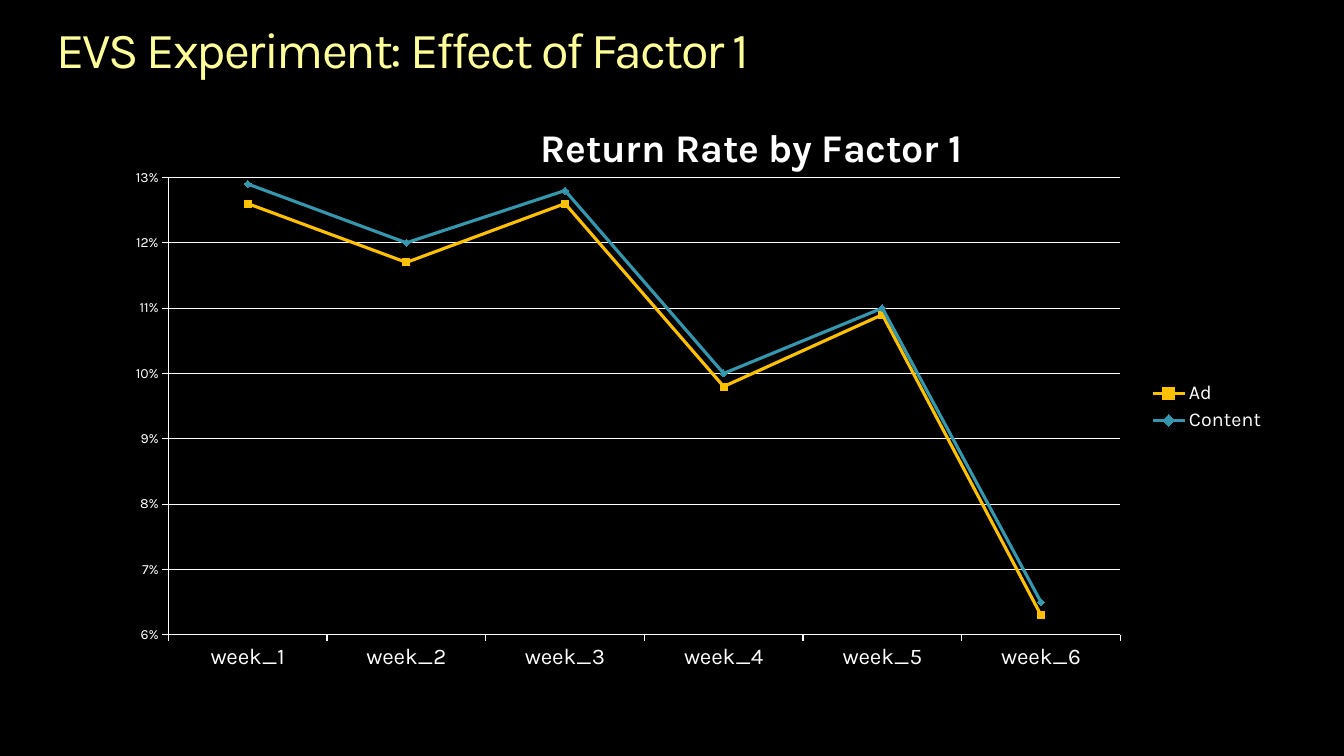
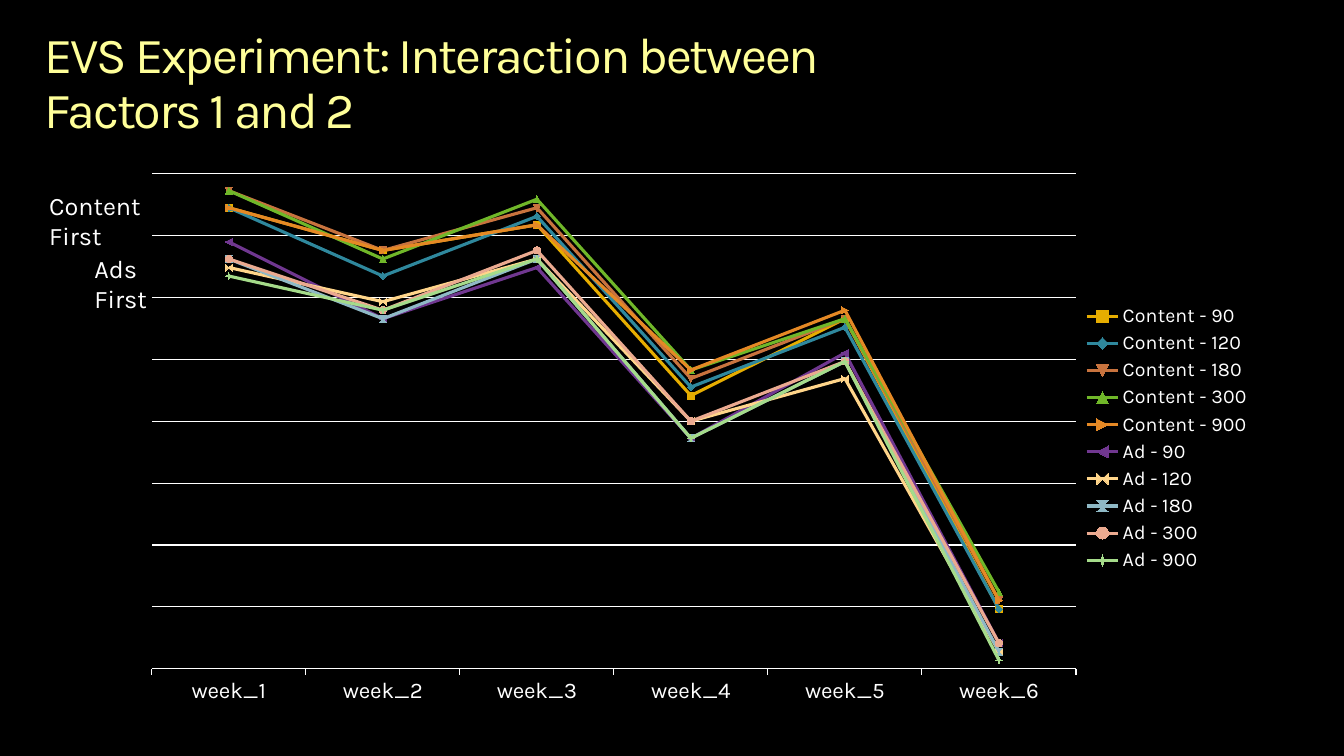
"""Build two slides showing the weekly return rates of the EVS experiment."""
import dataclasses
import typing

import lxml.etree
import pptx
import pptx.chart.chart
import pptx.chart.data
import pptx.dml.color
import pptx.enum.chart
import pptx.oxml.ns
import pptx.slide
import pptx.text.text
import pptx.util

FONT = "Karla"
BLACK, WHITE, YELLOW = "000000", "FFFFFF", "FFFF99"
WEEKS = [f"week_{number}" for number in range(1, 7)]


class Box(typing.NamedTuple):
    left: float
    top: float
    width: float
    height: float

    def lengths(self) -> list[pptx.util.Length]:
        return [pptx.util.Cm(value) for value in self]


class Series(typing.NamedTuple):
    name: str
    color: str
    values: list[float]


class Label(typing.NamedTuple):
    text: str
    box: Box


@dataclasses.dataclass(frozen=True)
class LineChart:
    box: Box
    plot: Box
    series: list[Series]
    minimum: float
    maximum: float
    step: float
    number_format: str
    title: str = ""
    title_place: tuple[float, float] = (0, 0)
    show_values: bool = True


@dataclasses.dataclass(frozen=True)
class ChartSlide:
    title_lines: list[str]
    title_box: Box
    chart: LineChart
    labels: list[Label] = dataclasses.field(default_factory=list)


SLIDES = [
    ChartSlide(
        ["EVS Experiment: Effect of Factor 1"],
        Box(1.42, 0.64, 31, 1.4),
        LineChart(
            box=Box(1.98, 2.9, 30.18, 14.7),
            plot=Box(0.075, 0.107, 0.795, 0.784),
            series=[
                Series("Ad", "FFC000", [0.126, 0.117, 0.126, 0.098, 0.109, 0.063]),
                Series("Content", "3497AE", [0.129, 0.12, 0.128, 0.1, 0.11, 0.065]),
            ],
            minimum=0.06,
            maximum=0.13,
            step=0.01,
            number_format="0%",
            title="Return Rate by Factor 1",
            title_place=(0.38, 0),
        ),
    ),
    ChartSlide(
        ["EVS Experiment: Interaction between", "Factors 1 and 2"],
        Box(1.12, 0.76, 31.6, 2.77),
        LineChart(
            box=Box(2.54, 4.01, 29.26, 14.07),
            plot=Box(0.044, 0.026, 0.796, 0.887),
            series=[
                Series("Content - 90", "E6AD00", [98, 93, 96, 76, 85, 51]),
                Series("Content - 120", "2F889D", [98, 90, 97, 77, 84, 51]),
                Series("Content - 180", "C8733E", [100, 93, 98, 78, 85, 52]),
                Series("Content - 300", "70B729", [100, 92, 99, 79, 85, 53]),
                Series("Content - 900", "E58925", [98, 93, 96, 79, 86, 52]),
                Series("Ad - 90", "703790", [94, 85, 91, 71, 81, 47]),
                Series("Ad - 120", "FFD58A", [91, 87, 92, 73, 78, 46]),
                Series("Ad - 180", "8FB9C6", [92, 85, 92, 71, 80, 46]),
                Series("Ad - 300", "EBAA90", [92, 86, 93, 73, 80, 47]),
                Series("Ad - 900", "A5DB8A", [90, 86, 92, 71, 80, 45]),
            ],
            minimum=44,
            maximum=102,
            step=7.25,
            number_format="0.00%",
            show_values=False,
        ),
        [
            Label("Ads First", Box(2.13, 6.25, 2.6, 1.02)),
            Label("Content First", Box(0.99, 4.67, 3.8, 1.02)),
        ],
    ),
]


def rgb(color: str) -> pptx.dml.color.RGBColor:
    return pptx.dml.color.RGBColor.from_string(color)


def style_font(font: pptx.text.text.Font, size: float, color: str = WHITE) -> None:
    font.name = FONT
    font.size = pptx.util.Pt(size)
    font.color.rgb = rgb(color)


def add_text_frame(slide: pptx.slide.Slide, box: Box) -> pptx.text.text.TextFrame:
    frame = slide.shapes.add_textbox(*box.lengths()).text_frame
    frame.word_wrap = True
    return frame


def add_title(slide: pptx.slide.Slide, lines: list[str], box: Box) -> None:
    frame = add_text_frame(slide, box)
    frame.margin_left = frame.margin_right = frame.margin_top = frame.margin_bottom = 0
    paragraph = frame.paragraphs[0]
    paragraph.line_spacing = 0.9
    for index, line in enumerate(lines):
        if index:
            paragraph.add_line_break()
        run = paragraph.add_run()
        run.text = line
        style_font(run.font, 36, YELLOW)
        run.font._element.set("spc", "-150")


def add_label(slide: pptx.slide.Slide, label: Label) -> None:
    run = add_text_frame(slide, label.box).paragraphs[0].add_run()
    run.text = label.text
    style_font(run.font, 18)


def set_layout(parent: typing.Any, position: int, settings: dict[str, typing.Any]) -> None:
    qualified = pptx.oxml.ns.qn
    for old_layout in parent.findall(qualified("c:layout")):
        parent.remove(old_layout)
    layout = lxml.etree.Element(qualified("c:layout"))
    manual = lxml.etree.SubElement(layout, qualified("c:manualLayout"))
    for name, value in settings.items():
        lxml.etree.SubElement(manual, qualified(f"c:{name}")).set("val", str(value))
    parent.insert(position, layout)


def style_axes(chart: pptx.chart.chart.Chart, content: LineChart) -> None:
    for axis, size in ((chart.category_axis, 16), (chart.value_axis, 10)):
        style_font(axis.tick_labels.font, size)
        axis.major_tick_mark = pptx.enum.chart.XL_TICK_MARK.OUTSIDE
        axis.format.line.color.rgb = rgb(WHITE)
        axis.format.line.width = pptx.util.Pt(0.75)
    values = chart.value_axis
    values.minimum_scale, values.maximum_scale = content.minimum, content.maximum
    values.major_unit = content.step
    values.tick_labels.number_format = content.number_format
    values.tick_labels.number_format_is_linked = False
    values.has_major_gridlines = True
    values.major_gridlines.format.line.color.rgb = rgb(WHITE)
    values.major_gridlines.format.line.width = pptx.util.Pt(0.75)
    values.visible = content.show_values


def add_chart_title(chart: pptx.chart.chart.Chart, content: LineChart) -> None:
    chart.has_title = bool(content.title)
    if content.title:
        run = chart.chart_title.text_frame.paragraphs[0].add_run()
        run.text = content.title
        style_font(run.font, 28)
        run.font.bold = True
        left, top = content.title_place
        place = {"xMode": "edge", "yMode": "edge", "x": left, "y": top}
        set_layout(chart.chart_title._element, 1, place)


def add_line_chart(slide: pptx.slide.Slide, content: LineChart) -> None:
    data = pptx.chart.data.CategoryChartData(number_format=content.number_format)
    data.categories = WEEKS
    for series in content.series:
        data.add_series(series.name, series.values)
    chart_type = pptx.enum.chart.XL_CHART_TYPE.LINE_MARKERS
    chart = slide.shapes.add_chart(chart_type, *content.box.lengths(), data).chart
    style_font(chart.font, 10)
    add_chart_title(chart, content)
    style_axes(chart, content)

    chart.has_legend = True
    chart.legend.position = pptx.enum.chart.XL_LEGEND_POSITION.RIGHT
    chart.legend.include_in_layout = False
    style_font(chart.legend.font, 14)

    plot = chart.plots[0]
    plot.vary_by_categories = False
    for line, series in zip(plot.series, content.series):
        line.smooth = False
        line.format.line.color.rgb = rgb(series.color)
        line.format.line.width = pptx.util.Pt(2.25)
        line.marker.format.fill.solid()
        line.marker.format.fill.fore_color.rgb = rgb(series.color)
        line.marker.format.line.color.rgb = rgb(series.color)

    area = chart._chartSpace.find(f".//{pptx.oxml.ns.qn('c:plotArea')}")
    left, top, width, height = content.plot
    set_layout(area, 0, {
        "layoutTarget": "inner", "xMode": "edge", "yMode": "edge",
        "x": left, "y": top, "w": width, "h": height,
    })


def main() -> None:
    presentation = pptx.Presentation()
    presentation.slide_width = pptx.util.Cm(33.87)
    presentation.slide_height = pptx.util.Cm(19.05)
    background = presentation.slide_master.background.fill
    background.solid()
    background.fore_color.rgb = rgb(BLACK)
    for content in SLIDES:
        slide = presentation.slides.add_slide(presentation.slide_layouts[6])
        add_title(slide, content.title_lines, content.title_box)
        add_line_chart(slide, content.chart)
        for label in content.labels:
            add_label(slide, label)
    presentation.save("out.pptx")


if __name__ == "__main__":
    main()
